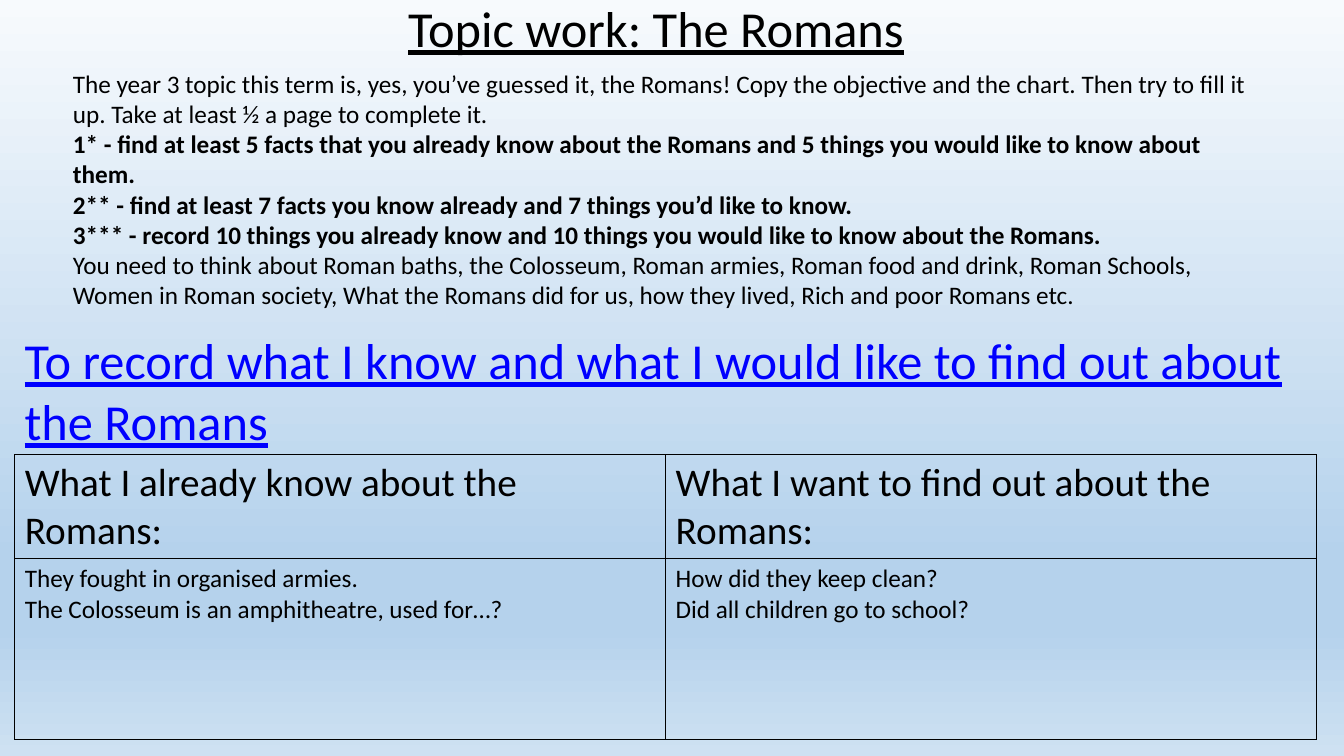
import copy

import pptx
import pptx.dml.color
import pptx.enum.text
import pptx.oxml
import pptx.oxml.ns
import pptx.util

RGBColor = pptx.dml.color.RGBColor
BLACK = RGBColor(0x00, 0x00, 0x00)
BLUE = RGBColor(0x00, 0x00, 0xFF)
PALE = RGBColor(0xF7, 0xFA, 0xFD)
SKY = RGBColor(0xB5, 0xD2, 0xEC)
MIST = RGBColor(0xCE, 0xE1, 0xF2)

EMU_PER_PX = 9525
PAGE_SIZE = (1280, 720)
TITLE_ONLY = 5

HEADING = {"size": 36, "underline": True}
BODY = {"size": 18}
BOLD = {"size": 18, "bold": True}
COLUMN_HEADING = {"size": 28}

TASK = [
    ("The year 3 topic this term is, yes, you’ve guessed it, the Romans! Copy the objective "
     "and the chart. Then try to fill it up. Take at least ½ a page to complete it.", BODY),
    ("1* - find at least 5 facts that you already know about the Romans and 5 things you "
     "would like to know about them.", BOLD),
    ("2** - find at least 7 facts you know already and 7 things you’d like to know.", BOLD),
    ("3*** - record 10 things you already know and 10 things you would like to know about "
     "the Romans.", BOLD),
    ("You need to think about Roman baths, the Colosseum, Roman armies, Roman food and drink, "
     "Roman Schools, Women in Roman society, What the Romans did for us, how they lived, "
     "Rich and poor Romans etc.", BODY),
]
CHART = [
    [[("What I already know about the Romans:", COLUMN_HEADING)],
     [("What I want to find out about the Romans:", COLUMN_HEADING)]],
    [[("They fought in organised armies.", BODY),
      ("The Colosseum is an amphitheatre, used for…?", BODY)],
     [("How did they keep clean?", BODY),
      ("Did all children go to school?", BODY)]],
]


def px(length):
    return pptx.util.Emu(length * EMU_PER_PX)


class Worksheet:
    font = "Calibri"

    def __init__(self):
        self.deck = pptx.Presentation()
        self.deck.slide_width, self.deck.slide_height = map(px, PAGE_SIZE)
        self.page = self.deck.slides.add_slide(self.deck.slide_layouts[TITLE_ONLY])

    def background(self, stops):
        """Fill the page from top to bottom with (percent, colour) stops."""
        fill = self.page.background.fill
        fill.gradient()
        fill.gradient_angle = 270
        stop_list = next(self.page.element.iter(pptx.oxml.ns.qn("a:gsLst")))
        while len(stop_list) < len(stops):
            stop_list.append(copy.deepcopy(stop_list[-1]))
        for stop, (percent, colour) in zip(fill.gradient_stops, stops):
            stop.position = percent / 100
            stop.color.rgb = colour

    def fill_frame(self, frame, lines, colour=BLACK):
        """Put (text, format) lines into a text frame, one paragraph each."""
        frame.word_wrap = True
        for index, (text, style) in enumerate(lines):
            para = frame.add_paragraph() if index else frame.paragraphs[0]
            para.alignment = pptx.enum.text.PP_ALIGN.LEFT
            span = para.add_run()
            span.text = text
            for name, value in {"name": self.font, **style}.items():
                setattr(span.font, name, pptx.util.Pt(value) if name == "size" else value)
            span.font.color.rgb = colour

    def title(self, text, left, top, width, height):
        box = self.page.shapes.title
        box.left, box.top, box.width, box.height = map(px, (left, top, width, height))
        box.text_frame.vertical_anchor = pptx.enum.text.MSO_ANCHOR.TOP
        box.text_frame.auto_size = pptx.enum.text.MSO_AUTO_SIZE.NONE
        self.fill_frame(box.text_frame, [(text, HEADING)])

    def text(self, lines, left, top, width, height, colour=BLACK):
        box = self.page.shapes.add_textbox(*map(px, (left, top, width, height)))
        self.fill_frame(box.text_frame, lines, colour)

    def border(self, cell):
        """Draw a thin line on all four sides of a cell."""
        properties = cell._tc.get_or_add_tcPr()
        for index, side in enumerate(("lnL", "lnR", "lnT", "lnB")):
            properties.insert(index, pptx.oxml.parse_xml(
                f'<a:{side} {pptx.oxml.ns.nsdecls("a")} w="{pptx.util.Pt(1)}">'
                f'<a:solidFill><a:srgbClr val="{BLACK}"/></a:solidFill></a:{side}>'))

    def table(self, rows, left, top, column_width, row_heights):
        columns = len(rows[0])
        size = (left, top, column_width * columns, sum(row_heights))
        table = self.page.shapes.add_table(len(rows), columns, *map(px, size)).table
        table.first_row = table.horz_banding = False
        for row, height in zip(table.rows, row_heights):
            row.height = px(height)
        for cell, lines in zip(table.iter_cells(), sum(rows, [])):
            cell.fill.background()
            self.border(cell)
            self.fill_frame(cell.text_frame, lines)


def main():
    sheet = Worksheet()
    sheet.background([(0, PALE), (74, SKY), (83, SKY), (100, MIST)])
    sheet.title("Topic work: The Romans", 379, -8, 521, 68)
    sheet.text([("To record what I know and what I would like to find out about the Romans",
                 HEADING)], 14, 309, 1251, 126, BLUE)
    sheet.text(TASK, 60, 60, 1148, 300)
    sheet.table(CHART, 14, 433, 620, (99, 172))
    sheet.deck.save("out.pptx")


if __name__ == "__main__":
    main()
